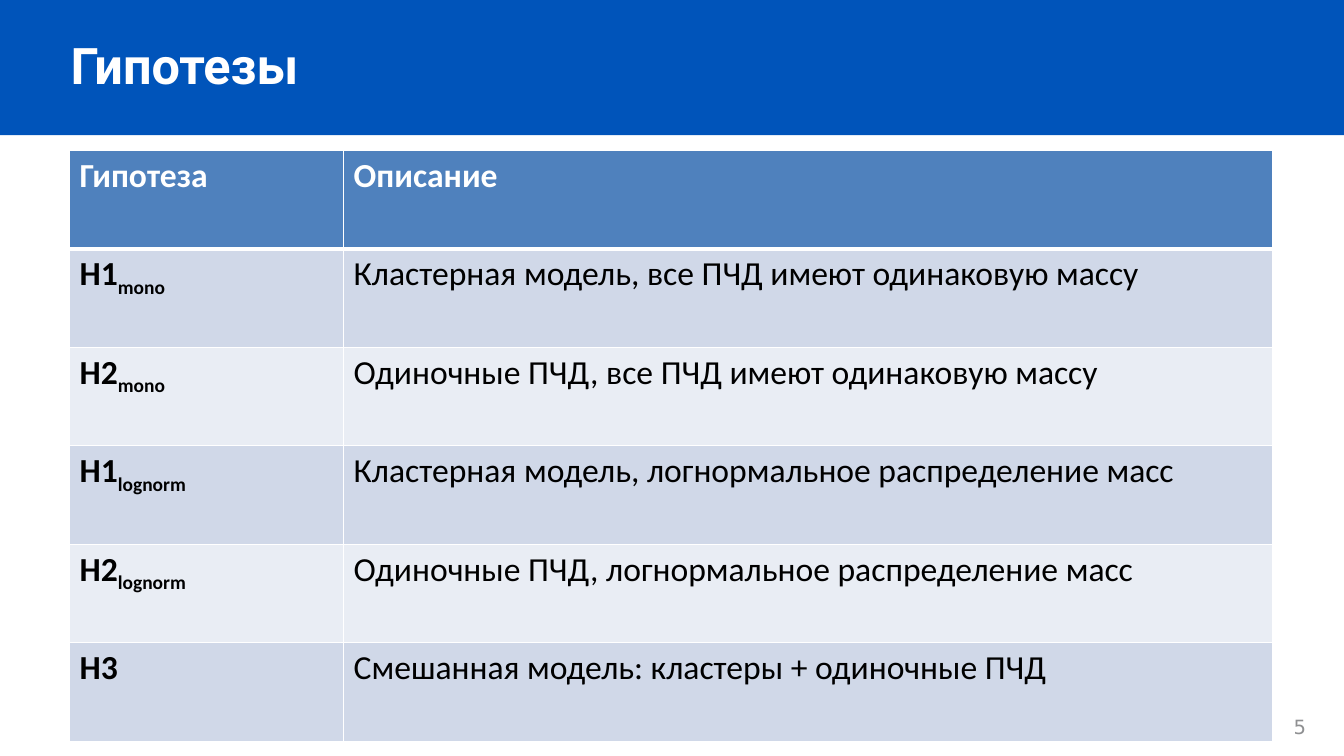
import pptx
import pptx.dml.color
import pptx.enum.shapes
import pptx.enum.text
import pptx.oxml
import pptx.oxml.ns
import pptx.util
from pptx.util import Pt

COLORS = {
    "banner": "0054BA",
    "header": "4F81BD",
    "odd": "D0D8E8",
    "even": "E9EDF4",
    "white": "FFFFFF",
    "black": "000000",
    "number": "8F9092",
}
HYPOTHESES = [
    ("H1", "mono", "Кластерная модель, все ПЧД имеют одинаковую массу"),
    ("H2", "mono", "Одиночные ПЧД, все ПЧД имеют одинаковую массу"),
    ("H1", "lognorm", "Кластерная модель, логнормальное распределение масс"),
    ("H2", "lognorm", "Одиночные ПЧД, логнормальное распределение масс"),
    ("H3", "", "Смешанная модель: кластеры + одиночные ПЧД"),
]


def rgb(name):
    return pptx.dml.color.RGBColor.from_string(COLORS[name])


def add_run(p, text, font="Calibri", size=24, color="black", bold=False,
            baseline=0, spacing=0):
    r = p.add_run()
    r.text = text
    r.font.name = font
    r.font.size = Pt(size)
    r.font.bold = bold
    r.font.color.rgb = rgb(color)
    rPr = r.font._element
    if baseline:
        rPr.set("baseline", str(baseline * 1000))
    if spacing:
        rPr.set("spc", str(round(spacing * 100)))


def add_banner(s, width, height):
    sp = s.shapes.add_shape(pptx.enum.shapes.MSO_SHAPE.RECTANGLE,
                            0, 0, width, height)
    sp.shadow.inherit = False
    sp.fill.solid()
    sp.fill.fore_color.rgb = rgb("banner")
    sp.line.fill.background()


def add_text(s, text, left, top, width, height, indent=0, **fmt):
    sp = s.shapes.add_textbox(Pt(left), Pt(top), Pt(width), Pt(height))
    tf = sp.text_frame
    tf.word_wrap = True
    tf.auto_size = pptx.enum.text.MSO_AUTO_SIZE.SHAPE_TO_FIT_TEXT
    tf.margin_left = tf.margin_right = tf.margin_top = tf.margin_bottom = 0
    p = tf.paragraphs[0]
    if indent:
        p._p.get_or_add_pPr().set("marL", str(Pt(indent)))
    add_run(p, text, **fmt)


def style_cell(cell, fill, bottom=1, top=1):
    cell.fill.solid()
    cell.fill.fore_color.rgb = rgb(fill)
    tcPr = cell._tc.get_or_add_tcPr()
    for i, (side, width) in enumerate(
            [("L", 1), ("R", 1), ("T", top), ("B", bottom)]):
        tcPr.insert(i, pptx.oxml.parse_xml(
            f'<a:ln{side} {pptx.oxml.ns.nsdecls("a")} w="{Pt(width)}">'
            f'<a:solidFill><a:srgbClr val="{COLORS["white"]}"/></a:solidFill>'
            f'</a:ln{side}>'))


def add_hypotheses(s, left, top, widths, row_height):
    rows = len(HYPOTHESES) + 1
    table = s.shapes.add_table(rows, len(widths), Pt(left), Pt(top),
                               Pt(sum(widths)), Pt(row_height * rows)).table
    for column, width in zip(table.columns, widths):
        column.width = Pt(width)
    for row in table.rows:
        row.height = Pt(row_height)
    for cell, text in zip(table.rows[0].cells, ("Гипотеза", "Описание")):
        style_cell(cell, "header", bottom=3)
        add_run(cell.text_frame.paragraphs[0], text, color="white", bold=True)
    for i, (name, index, description) in enumerate(HYPOTHESES, 1):
        cells = table.rows[i].cells
        for cell in cells:
            style_cell(cell, "odd" if i % 2 else "even", top=3 if i == 1 else 1)
        name_p, description_p = [c.text_frame.paragraphs[0] for c in cells]
        add_run(name_p, name, bold=True)
        if index:
            add_run(name_p, index, bold=True, baseline=-25)
        add_run(description_p, description)


def main():
    prs = pptx.Presentation()
    prs.slide_width, prs.slide_height = Pt(960), Pt(540)
    s = prs.slides.add_slide(prs.slide_layouts[6])
    add_banner(s, prs.slide_width, Pt(96.5))
    add_text(s, "Гипотезы", 50.4, 24.5, 860, 45.4,
             font="Roboto", size=36, color="white", bold=True)
    add_text(s, "5", 921, 510.5, 15, 19.5, indent=3,
             font="DejaVu Sans", size=14, color="number", spacing=0.3)
    add_hypotheses(s, 49.7, 107.3, (195.8, 663.8), 70.4)
    prs.save("out.pptx")


if __name__ == "__main__":
    main()
